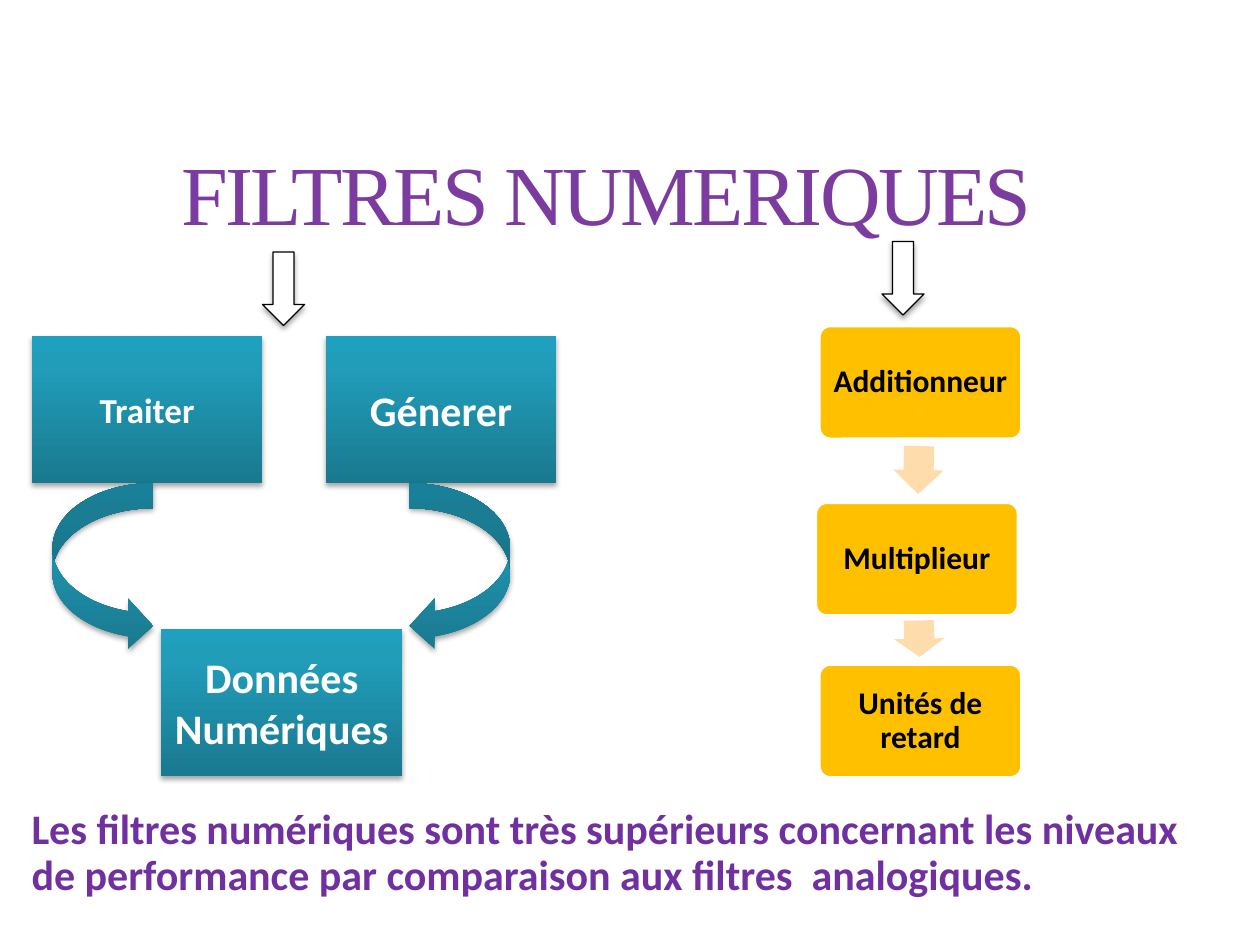
import copy

import pptx
import pptx.dml.color
import pptx.enum.shapes
import pptx.enum.text
import pptx.oxml
import pptx.oxml.ns
import pptx.util

Pt = pptx.util.Pt
SHAPES = pptx.enum.shapes.MSO_SHAPE
ALIGN = pptx.enum.text.PP_ALIGN
ANCHOR = pptx.enum.text.MSO_ANCHOR
TEAL_STOPS = [(0, "19798F"), (0.8, "219DBA"), (1, "1EA0BE")]


def colour(value):
    """Turn a hex string into a colour."""
    return pptx.dml.color.RGBColor.from_string(value)


def write(shape, text, size, value, font="Calibri", bold=True, align=ALIGN.CENTER,
          anchor=ANCHOR.MIDDLE, margins=(0, 0, 0, 0), spacing=None):
    """Set and format the single paragraph of a shape."""
    frame = shape.text_frame
    frame.text = text
    frame.word_wrap = True
    frame.auto_size = pptx.enum.text.MSO_AUTO_SIZE.NONE
    frame.vertical_anchor = anchor
    frame.margin_left, frame.margin_top, frame.margin_right, frame.margin_bottom = map(Pt, margins)
    para = frame.paragraphs[0]
    para.alignment = align
    if spacing:
        para.line_spacing = spacing
    span = para.runs[0]
    span.font.name = font
    span.font.size = Pt(size)
    span.font.bold = bold
    span.font.color.rgb = colour(value)
    return span


def add_shape(page, kind, box, fill=None, line=None, width=0.75):
    """Add a preset shape with a solid fill and an optional outline."""
    shape = page.shapes.add_shape(kind, *map(Pt, box))
    shape.shadow.inherit = False
    if fill:
        shape.fill.solid()
        shape.fill.fore_color.rgb = colour(fill)
    if line:
        shape.line.color.rgb = colour(line)
        shape.line.width = Pt(width)
    else:
        shape.line.fill.background()
    return shape


def add_shadow(shape):
    """Give a shape a soft shadow below it."""
    effects = shape._element.spPr.find(pptx.oxml.ns.qn("a:effectLst"))
    effects.append(pptx.oxml.parse_xml(
        f'<a:outerShdw {pptx.oxml.ns.nsdecls("a")} blurRad="{Pt(3.1)}" dist="{Pt(1.8)}" '
        'dir="5400000" rotWithShape="0"><a:srgbClr val="000000">'
        '<a:alpha val="35000"/></a:srgbClr></a:outerShdw>'))


def add_teal(page, kind, box):
    """Add a shadowed shape with the teal gradient."""
    shape = add_shape(page, kind, box)
    shape.fill.gradient()
    shape.fill.gradient_angle = 90
    stop_list = shape._element.spPr.find(".//" + pptx.oxml.ns.qn("a:gsLst"))
    stop_list.append(copy.deepcopy(stop_list[-1]))
    for stop, (position, value) in zip(shape.fill.gradient_stops, TEAL_STOPS):
        stop.position = position
        stop.color.rgb = colour(value)
    add_shadow(shape)
    return shape


def add_title(page, box, text):
    """Place and format the title placeholder."""
    title = page.shapes.title
    title.left, title.top, title.width, title.height = map(Pt, box)
    span = write(title, text, 48, "7C3C9F", "Times New Roman", False, ALIGN.LEFT,
                 margins=(13.5, 4.5, 0, 0), spacing=0.9)
    span._r.get_or_add_rPr().set("spc", "-150")


def add_pointer(page, box):
    """Add a white arrow that leads down from the title."""
    add_shadow(add_shape(page, SHAPES.DOWN_ARROW, box, "FFFFFF", "000000"))


def add_data_diagram(page, box):
    """Draw two operations whose curved arrows lead to the data below."""
    left, top, width, height = box
    box_width, box_height = 132, 84
    arrow_width, arrow_height, arrow_inset = 57.6, 96, 12
    data_width = 138
    blocks = [
        ("Traiter", 20, left, top, box_width),
        ("Génerer", 24, left + width - box_width, top, box_width),
        ("Données Numériques", 24, left + 74, top + height - box_height, data_width),
    ]
    for text, size, block_left, block_top, block_width in blocks:
        block = add_teal(page, SHAPES.RECTANGLE, (block_left, block_top, block_width, box_height))
        write(block, text, size, "FFFFFF", margins=(7.2, 3.6, 7.2, 3.6))
    arrows = [(SHAPES.CURVED_RIGHT_ARROW, arrow_inset), (SHAPES.CURVED_LEFT_ARROW, 216)]
    for kind, offset in arrows:
        add_teal(page, kind, (left + offset, top + box_height, arrow_width, arrow_height))


def add_component_chain(page, box):
    """Draw the filter components one below another, linked by arrows."""
    left, top, width, height = box
    card_width, card_height = 116, 65
    cards = [
        ("Additionneur", 2, 0),
        ("Multiplieur", 0, 101),
        ("Unités de retard", 2, height - card_height),
    ]
    for text, across, down in cards:
        card = add_shape(page, SHAPES.ROUNDED_RECTANGLE,
                         (left + across, top + down, card_width, card_height),
                         "FFC000", "FFFFFF", 2)
        card.adjustments[0] = 0.1
        write(card, text, 18, "000000", margins=(3, 5, 3, 5), spacing=0.9)
    for across, down, length, rotation in [(45.2, 68.2, 27.4, 91.2), (48.8, 164.6, 20.9, 88.7)]:
        arrow = add_shape(page, SHAPES.RIGHT_ARROW,
                          (left + across, top + down, length, 28.8), "FFDCAB")
        arrow.adjustments[0] = 0.6
        arrow.rotation = rotation


def add_conclusion(page, box, text):
    """Write the closing sentence."""
    note = page.shapes.add_textbox(*map(Pt, box))
    write(note, text, 24, "7030A0", align=ALIGN.LEFT, anchor=ANCHOR.TOP, spacing=0.9)


def main():
    """Build and save the deck."""
    deck = pptx.Presentation()
    deck.slide_width, deck.slide_height = Pt(720), Pt(540)
    page = deck.slides.add_slide(deck.slide_layouts[5])
    add_title(page, (90, 51, 582.5, 120), "FILTRES NUMERIQUES")
    add_pointer(page, (150, 144, 24, 42))
    add_pointer(page, (504, 138, 24, 42))
    add_data_diagram(page, (18, 192, 300, 251.3))
    add_component_chain(page, (466, 186, 118, 258.5))
    add_conclusion(page, (18, 462, 672, 60),
                   "Les filtres numériques sont très supérieurs concernant les niveaux "
                   "de performance par comparaison aux filtres  analogiques.")
    deck.save("out.pptx")


if __name__ == "__main__":
    main()
